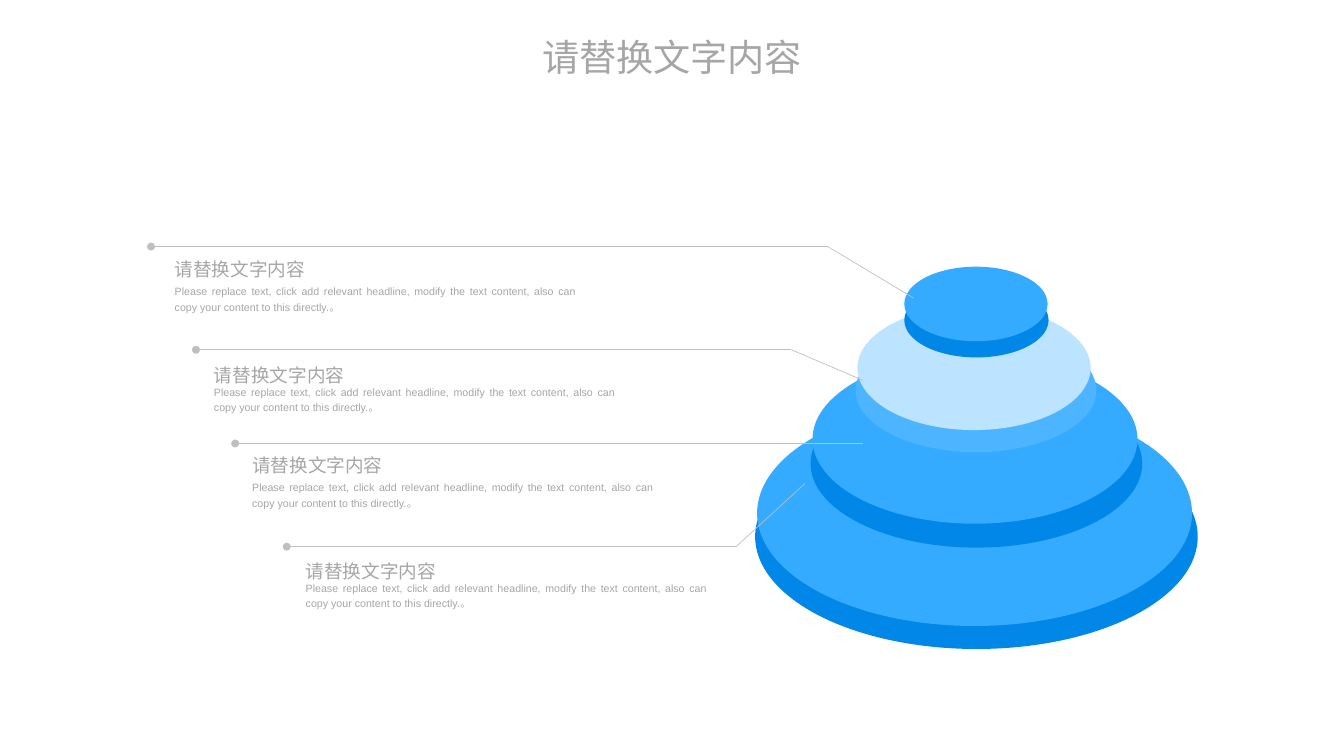
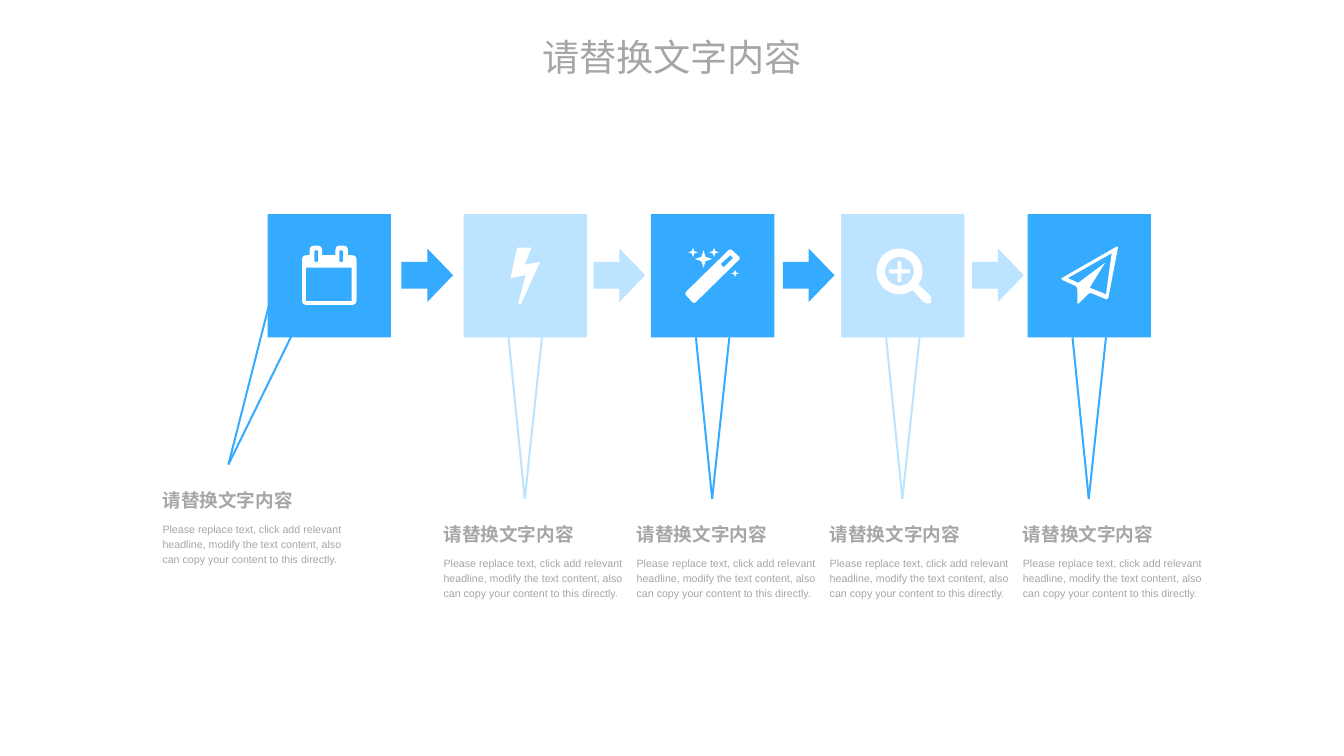
from math import cos, sin, radians, dist
from pptx import Presentation
from pptx.dml.color import RGBColor as Rgb
from pptx.enum.shapes import MSO_CONNECTOR as Conn, MSO_SHAPE as Kind
from pptx.enum.text import MSO_ANCHOR as Anchor, MSO_AUTO_SIZE as Auto, PP_ALIGN as Align
from pptx.oxml.ns import qn
from pptx.util import Emu, Pt
from lxml.etree import SubElement as Sub

PX = 9144  # EMU per px, 100 px to the inch
WIDE, HIGH = 1406, 791
FONT = "Arial"
HUE = {"deep": "0087E7", "main": "35ABFF", "mid": "4DB5FF", "pale": "BCE3FF",
       "rule": "BFBFBF", "text": "A6A6A6", "white": "FFFFFF"}

# Wording
HEAD = "请替换文字内容"
BODY = ("Please replace text, click add relevant headline, modify the text content, "
        "also can copy your content to this directly.")

# Text formats: font, paragraph and frame values
NONE = dict(margin_left=0, margin_top=0, margin_right=0, margin_bottom=0)
GROW = dict(auto_size=Auto.SHAPE_TO_FIT_TEXT)
STYLE = {
    "title": (dict(size=Pt(28)), dict(alignment=Align.CENTER, line_spacing=1.3), NONE | GROW),
    "label": (dict(size=Pt(14)), dict(line_spacing=1.2), GROW),
    "note": (dict(size=Pt(8)), dict(alignment=Align.JUSTIFY, line_spacing=1.2), GROW),
    "step": (dict(size=Pt(14), bold=True), dict(line_spacing=1.2),
             NONE | dict(margin_top=11 * PX, margin_bottom=11 * PX,
                         vertical_anchor=Anchor.MIDDLE)),
    "brief": (dict(size=Pt(8)), dict(line_spacing=1.2), NONE | GROW),
}

# Tower discs, bottom to top: box, colour
DISCS = [
    ((790, 444, 463, 235), "deep"), ((792, 419, 455, 236), "main"),
    ((848, 397, 347, 176), "deep"), ((850, 371, 340, 177), "main"),
    ((895, 344, 252, 129), "mid"), ((897, 320, 244, 130), "pale"),
    ((946, 296, 151, 78), "deep"), ((946, 279, 150, 78), "main"),
]
# Callouts: leader from disc to dot, text left, label top, note top
CALLS = [
    ([(956, 312), (866, 258), (158, 258)], 173, 260, 291),
    ([(903, 398), (828, 366), (205, 366)], 214, 371, 396),
    ([(903, 464), (246, 464)], 254, 465, 496),
    ([(842, 506), (770, 572), (300, 572)], 310, 576, 601),
]

# Steps: tile left, colour, text left and top, pointer tip and its two ends
TILE, TOP = 129, 224
STEPS = [(280, "main", 170, 502, (239, 486), [(281, 321), (314, 333)])]
for i, (left, hue) in enumerate([(485, "pale"), (681, "main"), (880, "pale"), (1075, "main")]):
    mid = left + TILE // 2
    ends = [(mid + d, TOP + TILE) for d in (-17, 18)]
    STEPS.append((left, hue, 464 + 202 * i, 538, (mid, 522), ends))
ARROWS = [(420, "main"), (621, "pale"), (819, "main"), (1017, "pale")]


# Outline makers: points are (x, y)
def rect(x, y, w, h):
    return [(x, y), (x + w, y), (x + w, y + h), (x, y + h)]


def arc(x, y, r, start=0, end=360):
    return [(x + r * cos(radians(a)), y + r * sin(radians(a)))
            for a in range(start, end + 1, 5)]


def star(x, y, r):
    return [(x + (r if k % 2 == 0 else r * 0.35) * cos(radians(45 * k)),
             y + (r if k % 2 == 0 else r * 0.35) * sin(radians(45 * k))) for k in range(8)]


def plus(x, y, r, t):
    return [(x + a, y + b) for a, b in
            [(-r, -t), (-t, -t), (-t, -r), (t, -r), (t, -t), (r, -t),
             (r, t), (t, t), (t, r), (-t, r), (-t, t), (-r, t)]]


def soft(pts, r, sharp=()):
    """Round each corner by r, save those in sharp."""
    out = []
    for k, (x, y) in enumerate(pts):
        if (x, y) in sharp:
            out.append((x, y))
            continue
        (ax, ay), (bx, by) = [
            (x + (p - x) * r / dist((p, q), (x, y)), y + (q - y) * r / dist((p, q), (x, y)))
            for p, q in (pts[k - 1], pts[(k + 1) % len(pts)])]
        for t in (0, 0.25, 0.5, 0.75, 1):
            u = 1 - t
            out.append((u * u * ax + 2 * u * t * x + t * t * bx,
                        u * u * ay + 2 * u * t * y + t * t * by))
    return out


# Icons, one per step: an outer outline, then holes and loose parts
NOOK = [(x, 267) for x in (324, 337, 351, 364)]
RING = arc(941, 284, 24, 55, 395)
ICONS = [
    [soft([(316, 267), NOOK[0], (324, 257), (337, 257), NOOK[1], NOOK[2],
           (351, 257), (364, 257), NOOK[3], (373, 267), (373, 319), (316, 319)], 5, NOOK),
     rect(320, 280, 48, 35)] + [soft(rect(x, 262, 4, 12), 1) for x in (329, 355)],
    [soft([(565, 274), (545, 318), (542, 318), (550, 288), (534, 291),
           (541, 259), (556, 259), (549, 277)], 1)],
    [soft([(775, 270), (726, 318), (716, 307), (764, 260)], 3),
     [(767, 270), (764, 267), (754, 276), (757, 280)]]
    + [star(*s) for s in [(725, 264, 5), (736, 271, 9), (747, 264, 5), (769, 286, 4)]],
    [soft(RING + [(974, 310), (974, 318), (967, 317)], 3, RING),
     arc(941, 284, 15), soft(plus(941, 284, 11, 2), 1)],
    [soft([(1170, 257), (1159, 314), (1140, 306), (1127, 319), (1127, 300), (1109, 292)], 3),
     [(1163, 265), (1117, 291), (1128, 296), (1156, 275), (1140, 301), (1157, 308)]],
]


# Drawing helpers
def emu(*vals):
    return [Emu(round(v * PX)) for v in vals]


def tone(hue):
    return Rgb.from_string(HUE[hue])


def put(obj, vals):
    for key, val in vals.items():
        setattr(obj, key, val)


def paint(shape, hue):
    shape.shadow.inherit = False
    shape.fill.solid()
    shape.fill.fore_color.rgb = tone(hue)
    shape.line.fill.background()


def block(page, kind, box, hue):
    paint(page.shapes.add_shape(kind, *emu(*box)), hue)


def line(page, start, end, hue, width, dot=False):
    bar = page.shapes.add_connector(Conn.STRAIGHT, *emu(*start, *end))
    bar.line.color.rgb = tone(hue)
    bar.line.width = Pt(width)
    if dot:
        Sub(bar.line._get_or_add_ln(), qn("a:tailEnd"), type="oval")
    Sub(bar._element.spPr, qn("a:effectLst"))


def icon(page, parts):
    pen = page.shapes.build_freeform(*emu(*parts[0][0]), scale=1.0)
    for k, pts in enumerate(parts):
        if k:
            pen.move_to(*emu(*pts[0]))
        pen.add_line_segments([emu(*p) for p in pts[1:]], close=True)
    paint(pen.convert_to_shape(), "white")


def text(page, box, words, style):
    font, para, frame = STYLE[style]
    area = page.shapes.add_textbox(*emu(*box)).text_frame
    put(area, dict(word_wrap=True) | frame)
    put(area.paragraphs[0], para)
    run = area.paragraphs[0].add_run()
    run.text = words
    put(run.font, dict(name=FONT) | font)
    run.font.color.rgb = tone("text")


def add_page(deck):
    page = deck.slides.add_slide(deck.slide_layouts[6])
    text(page, (547, 22, 312, 55), HEAD, "title")
    return page


# Slides
def tower(page):
    for box, hue in DISCS:
        block(page, Kind.OVAL, box, hue)
    for path, left, top, low in CALLS:
        for start, end in zip(path, path[1:]):
            line(page, start, end, "rule", 0.5, dot=end == path[-1])
        text(page, (left, top, 173, 36), HEAD, "label")
        text(page, (left, low, 440, 42), BODY + "。", "note")


def chain(page):
    for (left, hue, x, y, tip, ends), parts in zip(STEPS, ICONS):
        for end in ends:
            line(page, tip, end, hue, 1.5)
        block(page, Kind.RECTANGLE, (left, TOP, TILE, TILE), hue)
        icon(page, parts)
        text(page, (x, y, 146, 37), HEAD, "step")
        text(page, (x, y + 42, 192, 47), BODY, "brief")
    for left, hue in ARROWS:
        block(page, Kind.RIGHT_ARROW, (left, 260, 54, 56), hue)


def main():
    deck = Presentation()
    deck.slide_width, deck.slide_height = emu(WIDE, HIGH)
    for draw in (tower, chain):
        draw(add_page(deck))
    deck.save("out.pptx")


if __name__ == "__main__":
    main()
